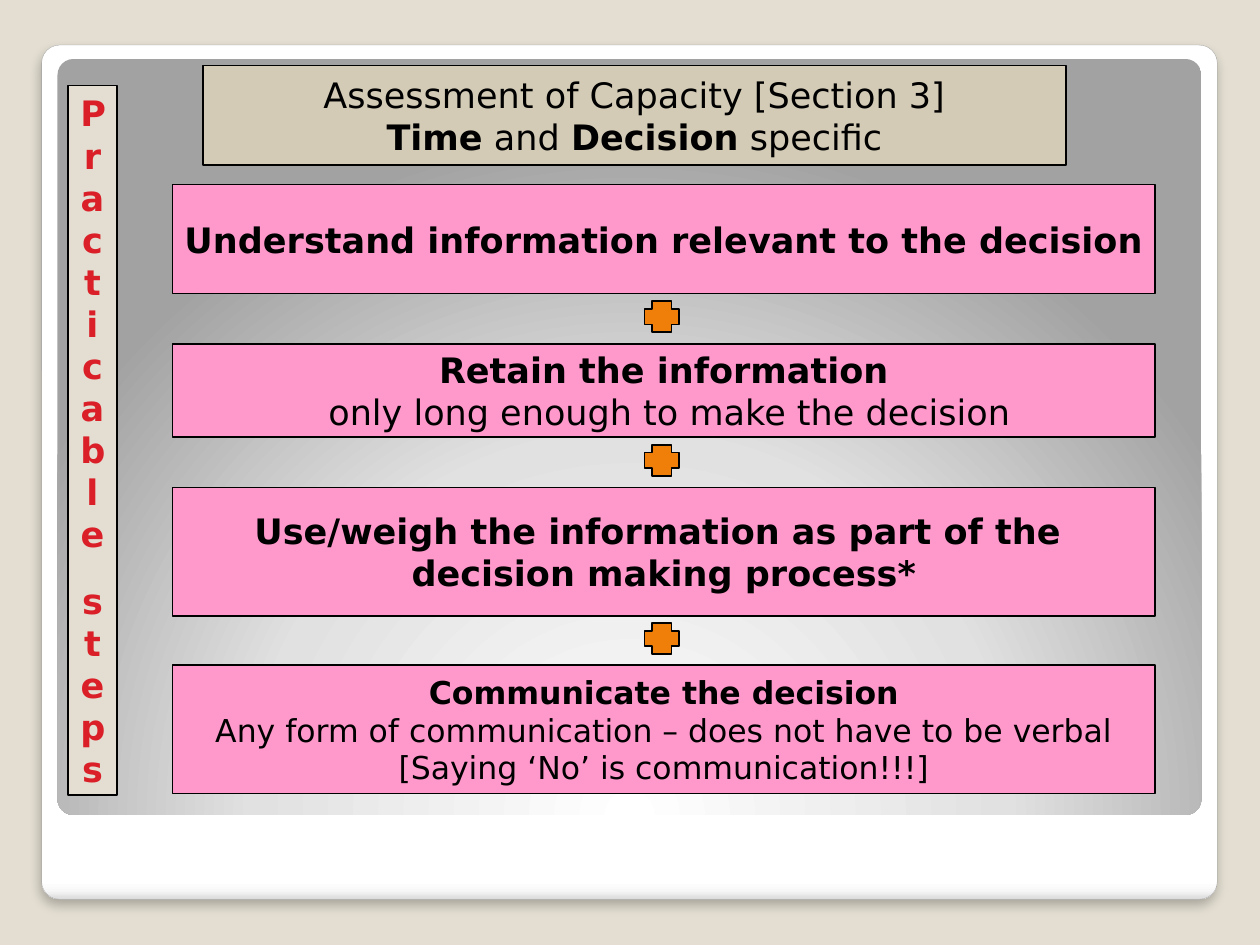
from lxml import etree
from pptx import Presentation
from pptx.dml.color import RGBColor
from pptx.enum.shapes import MSO_SHAPE
from pptx.enum.text import MSO_ANCHOR, MSO_AUTO_SIZE, PP_ALIGN
from pptx.oxml import parse_xml
from pptx.oxml.ns import nsdecls, qn
from pptx.util import Cm, Pt

RECTANGLE = MSO_SHAPE.RECTANGLE
ROUNDED = MSO_SHAPE.ROUNDED_RECTANGLE
PLUS = MSO_SHAPE.CROSS
TOP, MIDDLE = MSO_ANCHOR.TOP, MSO_ANCHOR.MIDDLE
CENTER = PP_ALIGN.CENTER
NO_AUTOFIT = MSO_AUTO_SIZE.NONE

FONT = "DejaVu Sans"
BEIGE, TAN, PINK, ORANGE = "E3DED1", "D3CBB6", "FF99CC", "F07F09"
BLACK, RED, EDGE = "000000", "DA1F28", "A4A4A4"

# top, height, font size, paragraphs of (text, bold) runs
STEPS = [
    (3.72, 2.2, 20, [[("Understand information relevant to the decision", True)]]),
    (6.93, 1.88, 20, [[("Retain the information", True)],
                      [(" only long enough to make the decision", False)]]),
    (9.83, 2.59, 20, [[("Use/weigh the information as part of the ", True)],
                      [("decision making process*", True)]]),
    (13.41, 2.59, 18, [[("Communicate the decision", True)],
                       [("Any form of communication – does not have to be verbal", False)],
                       [("[Saying ‘No’ is communication!!!]", False)]]),
]


def color(value):
    return RGBColor.from_string(value)


def style(shape, fill, line, width):
    shape.shadow.inherit = False
    shape.fill.solid()
    shape.fill.fore_color.rgb = color(fill)
    if line:
        shape.line.color.rgb = color(line)
        shape.line.width = Pt(width)
    else:
        shape.line.fill.background()


def add_shape(slide, kind, box, fill, line=None, width=1):
    shape = slide.shapes.add_shape(kind, *(Cm(length) for length in box))
    style(shape, fill, line, width)
    return shape


def write(shape, paragraphs, size, font_color=BLACK, anchor=MIDDLE, wrap=False):
    frame = shape.text_frame
    frame.auto_size = NO_AUTOFIT
    frame.word_wrap = wrap
    frame.vertical_anchor = anchor
    for index, runs in enumerate(paragraphs):
        paragraph = frame.add_paragraph() if index else frame.paragraphs[0]
        paragraph.alignment = CENTER
        for text, bold in runs:
            run = paragraph.add_run()
            run.text = text
            run.font.name = FONT
            run.font.size = Pt(size)
            run.font.bold = bold
            run.font.color.rgb = color(font_color)


def set_gradient(shape, stops, direction):
    """Replace the solid fill by stops of (percent, colour)."""
    stop_xml = "".join(
        f'<a:gs pos="{percent * 1000}"><a:srgbClr val="{value}"/></a:gs>'
        for percent, value in stops)
    gradient = parse_xml(
        f'<a:gradFill {nsdecls("a")} rotWithShape="1">'
        f"<a:gsLst>{stop_xml}</a:gsLst>{direction}</a:gradFill>")
    properties = shape._element.spPr
    properties.replace(properties.find(qn("a:solidFill")), gradient)


def add_shadow(shape, blur, distance, opacity):
    effects = shape._element.spPr.find(qn("a:effectLst"))
    shadow = etree.SubElement(
        effects, qn("a:outerShdw"), blurRad=str(Pt(blur)), dist=str(Pt(distance)),
        dir="5400000", algn="t", rotWithShape="0")
    tint = etree.SubElement(shadow, qn("a:srgbClr"), val=BLACK)
    etree.SubElement(tint, qn("a:alpha"), val=str(opacity * 1000))


def add_panels(slide, left, top, width, height):
    """White card with a grey panel inside its upper part."""
    card = add_shape(slide, ROUNDED, (left, top, width, height), "FFFFFF", EDGE, 0.16)
    set_gradient(card, [(0, "FFFFFF"), (98, "FFFFFF"), (99, "F7F7F7"), (100, "DADADA")],
                 '<a:lin ang="5400000" scaled="0"/>')
    add_shadow(card, blur=6, distance=4, opacity=25)
    panel = add_shape(slide, ROUNDED,
                      (left + 0.32, top + 0.28, width - 0.64, height - 1.98), "FFFFFF")
    set_gradient(panel, [(0, "FFFFFF"), (55, "E1E1E1"), (100, "A2A2A2")],
                 '<a:path path="circle">'
                 '<a:fillToRect l="50000" t="175000" r="50000" b="-75000"/></a:path>')
    for shape in (card, panel):
        shape.adjustments[0] = 0.021


def place_title(slide, left, top, width, height):
    """Turn the title placeholder into an ellipse in front of the panels."""
    title = slide.shapes.title
    slide.shapes._spTree.append(title._element)
    title.left, title.top = Cm(left), Cm(top)
    title.width, title.height = Cm(width), Cm(height)
    title._element.spPr.append(parse_xml(
        f'<a:prstGeom {nsdecls("a")} prst="ellipse"><a:avLst/></a:prstGeom>'))
    style(title, TAN, BLACK, 1)
    write(title, [[("Assessment of Capacity [Section 3]", False)],
                  [("Time", True), (" and ", False),
                   ("Decision", True), (" specific", False)]], 20)


def add_steps(slide, left, width):
    """Stack the step boxes, with a plus sign in each gap."""
    plus_width, plus_height, nudge = 0.7, 0.62, 0.04
    previous_bottom = None
    for top, height, size, paragraphs in STEPS:
        box = add_shape(slide, RECTANGLE, (left, top, width, height), PINK, BLACK)
        write(box, paragraphs, size)
        if previous_bottom is not None:
            plus_left = left + (width - plus_width) / 2 - nudge
            plus_top = (previous_bottom + top - plus_height) / 2 - nudge
            add_shape(slide, PLUS, (plus_left, plus_top, plus_width, plus_height),
                      ORANGE, BLACK)
        previous_bottom = top + height


def add_sidebar(slide, left, top, width, height):
    """Bar so narrow that its words wrap after every letter."""
    bar = add_shape(slide, RECTANGLE, (left, top, width, height), BEIGE, BLACK, 0.75)
    write(bar, [[("Practicable", True)], [("steps", True)]], 20, RED, TOP, wrap=True)
    bar.text_frame.paragraphs[1].space_before = Pt(14.4)


def main():
    presentation = Presentation()
    presentation.slide_width, presentation.slide_height = Cm(25.4), Cm(19.05)
    slide = presentation.slides.add_slide(presentation.slide_layouts[5])
    slide.background.fill.solid()
    slide.background.fill.fore_color.rgb = color(BEIGE)
    add_panels(slide, 0.84, 0.91, 23.7, 17.22)
    place_title(slide, 4.09, 1.32, 17.4, 2.01)
    add_steps(slide, 3.48, 19.81)
    add_sidebar(slide, 1.37, 1.73, 0.99, 14.3)
    presentation.save("out.pptx")


if __name__ == "__main__":
    main()
